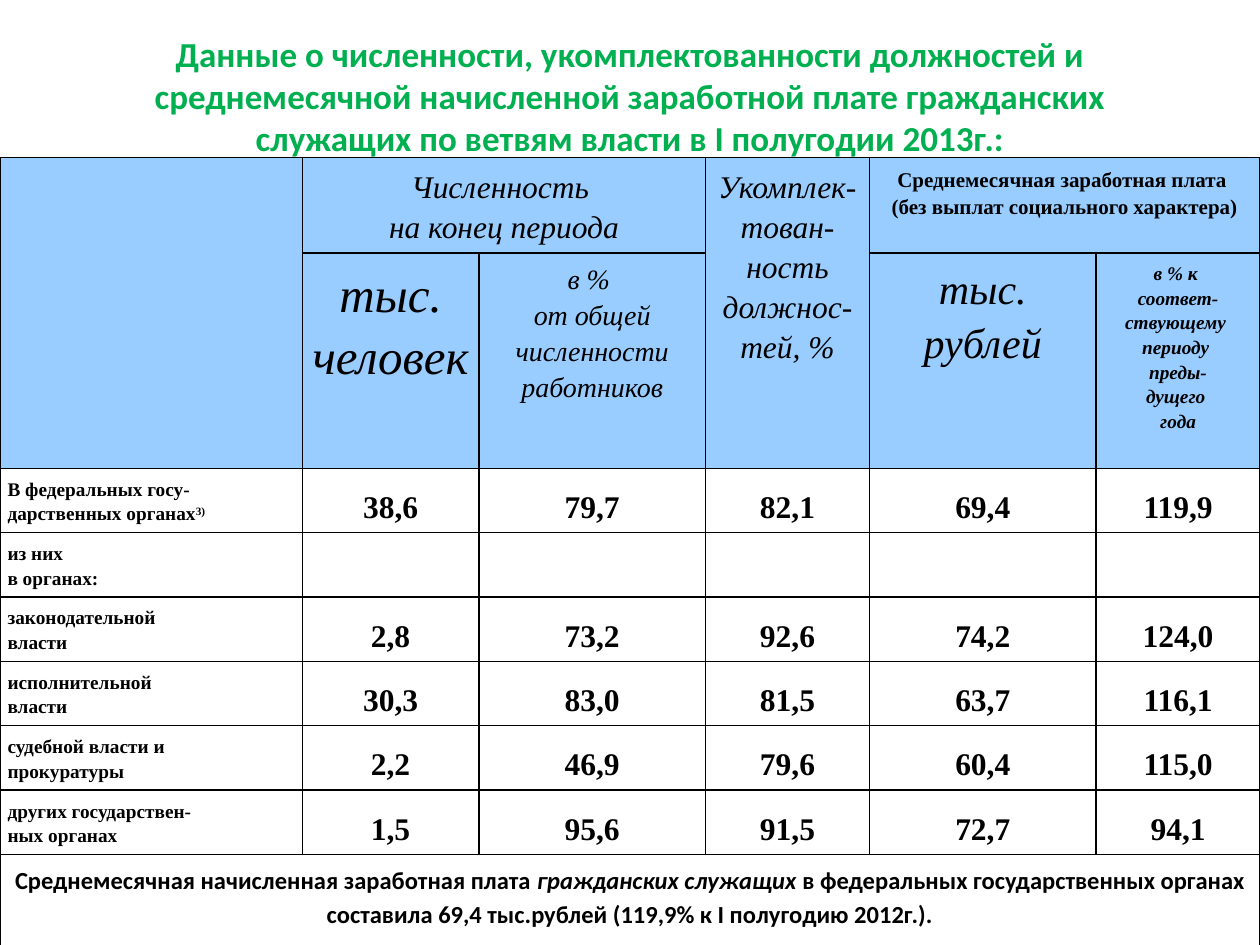
import pptx
import pptx.util
import pptx.dml.color
import pptx.enum.text
import pptx.oxml.ns
import lxml.etree

Inches = pptx.util.Inches
Pt = pptx.util.Pt
ALIGN = pptx.enum.text.PP_ALIGN
ANCHOR = pptx.enum.text.MSO_ANCHOR
COLORS = {"title": "00B050", "head": "99CCFF", "body": "FFFFFF", "ink": "000000"}
SERIF = "Times New Roman"
WIDE, HIGH = 10, 7.5
COLS = [2.4, 1.4, 1.8, 1.3, 1.8, 1.3]
ROWS = [0.75, 1.71] + [0.51] * 6 + [0.83]
MERGES = [(0, 0, 1, 0), (0, 1, 0, 2), (0, 3, 1, 3), (0, 4, 0, 5), (8, 0, 8, 5)]
TITLE = ("Данные о численности, укомплектованности должностей и среднемесячной "
         "начисленной заработной плате гражданских служащих по ветвям власти "
         "в I полугодии 2013г.:")
HEADS = [
    (0, 1, "Численность \nна конец периода", 18, False, True),
    (0, 3, "Укомплек-\nтован-ность\nдолжнос-тей, %", 18, False, True),
    (0, 4, "Среднемесячная заработная плата \n(без выплат социального характера)",
     12, True, False),
    (1, 1, "тыс.\nчеловек", 28, False, True),
    (1, 2, "в % \nот общей численности работников", 16, False, True),
    (1, 4, "тыс.\nрублей", 24, False, True),
    (1, 5, "в % к \nсоответ-\nствующему \nпериоду \nпреды-\nдущего \nгода",
     11, True, True),
]
DATA = [
    ("В федеральных госу-\nдарственных органах", "38,6", "79,7", "82,1", "69,4", "119,9"),
    ("из них \nв органах:",),
    ("законодательной \nвласти", "2,8", "73,2", "92,6", "74,2", "124,0"),
    ("исполнительной \nвласти", "30,3", "83,0", "81,5", "63,7", "116,1"),
    ("судебной власти и \nпрокуратуры", "2,2", "46,9", "79,6", "60,4", "115,0"),
    ("других государствен- \nных органах", "1,5", "95,6", "91,5", "72,7", "94,1"),
]
NOTE = [
    ("Среднемесячная начисленная заработная плата ", False),
    ("гражданских служащих", True),
    (" в федеральных государственных органах составила 69,4 тыс.рублей "
     "(119,9% к I полугодию 2012г.).", False),
]


def tint(key):
    return pptx.dml.color.RGBColor.from_string(COLORS[key])


def style(font, size, bold=True, slant=False, face=SERIF, key="ink"):
    font.size, font.bold, font.italic, font.name = Pt(size), bold, slant, face
    font.color.rgb = tint(key)


def border(cell):
    props = cell._tc.get_or_add_tcPr()
    name = pptx.oxml.ns.qn
    for side in ("lnL", "lnR", "lnT", "lnB"):
        line = lxml.etree.SubElement(props, name("a:" + side), w=str(Pt(1)))
        fill = lxml.etree.SubElement(line, name("a:solidFill"))
        lxml.etree.SubElement(fill, name("a:srgbClr"), val=COLORS["ink"])


def write(cell, text, size, bold=True, slant=False, face=SERIF,
          align=ALIGN.CENTER, anchor=ANCHOR.TOP):
    cell.margin_left = cell.margin_right = Inches(0.06)
    cell.margin_top = cell.margin_bottom = Inches(0.06)
    cell.vertical_anchor = anchor
    para = cell.text_frame.paragraphs[0]
    para.text = text
    para.alignment, para.line_spacing, para.space_after = align, 1.15, Pt(10)
    style(para.font, size, bold, slant, face)
    return para


def heading(slide, left, top, width, height):
    title = slide.shapes.title
    title.left, title.top = Inches(left), Inches(top)
    title.width, title.height = Inches(width), Inches(height)
    frame = title.text_frame
    frame.word_wrap = True
    frame.vertical_anchor = ANCHOR.MIDDLE
    frame.margin_bottom = Inches(0.38)
    para = frame.paragraphs[0]
    para.text = TITLE
    para.alignment = ALIGN.CENTER
    style(para.font, 20, face="Calibri", key="title")


def grid(slide, left, top, width, height):
    shape = slide.shapes.add_table(len(ROWS), len(COLS), Inches(left), Inches(top),
                                   Inches(width), Inches(height))
    table = shape.table
    table.first_row = table.horz_banding = False
    for col, share in zip(table.columns, COLS):
        col.width = Inches(width * share / sum(COLS))
    for row, share in zip(table.rows, ROWS):
        row.height = Inches(height * share / sum(ROWS))
    for r in range(len(ROWS)):
        for c in range(len(COLS)):
            cell = table.cell(r, c)
            border(cell)
            cell.fill.solid()
            cell.fill.fore_color.rgb = tint("head" if r < 2 else "body")
    for r, c, low, right in MERGES:
        table.cell(r, c).merge(table.cell(low, right))
    for r, c, text, size, bold, slant in HEADS:
        write(table.cell(r, c), text, size, bold, slant)
    for r, (label, *values) in enumerate(DATA, 2):
        write(table.cell(r, 0), label, 11, align=ALIGN.LEFT, anchor=ANCHOR.BOTTOM)
        for c, value in enumerate(values, 1):
            write(table.cell(r, c), value, 18, anchor=ANCHOR.BOTTOM)
    mark = table.cell(2, 0).text_frame.paragraphs[0].add_run()
    mark.text = "3)"
    mark.font._element.set("baseline", "30000")
    para = write(table.cell(8, 0), "", 14, face="Calibri")
    for text, slant in NOTE:
        run = para.add_run()
        run.text, run.font.italic = text, slant


def main():
    deck = pptx.Presentation()
    deck.slide_width, deck.slide_height = Inches(WIDE), Inches(HIGH)
    slide = deck.slides.add_slide(deck.slide_layouts[5])
    heading(slide, WIDE * 0.05, HIGH * 0.04, WIDE * 0.9, HIGH / 6)
    grid(slide, 0, HIGH / 6, WIDE, sum(ROWS))
    deck.save("out.pptx")


if __name__ == "__main__":
    main()
